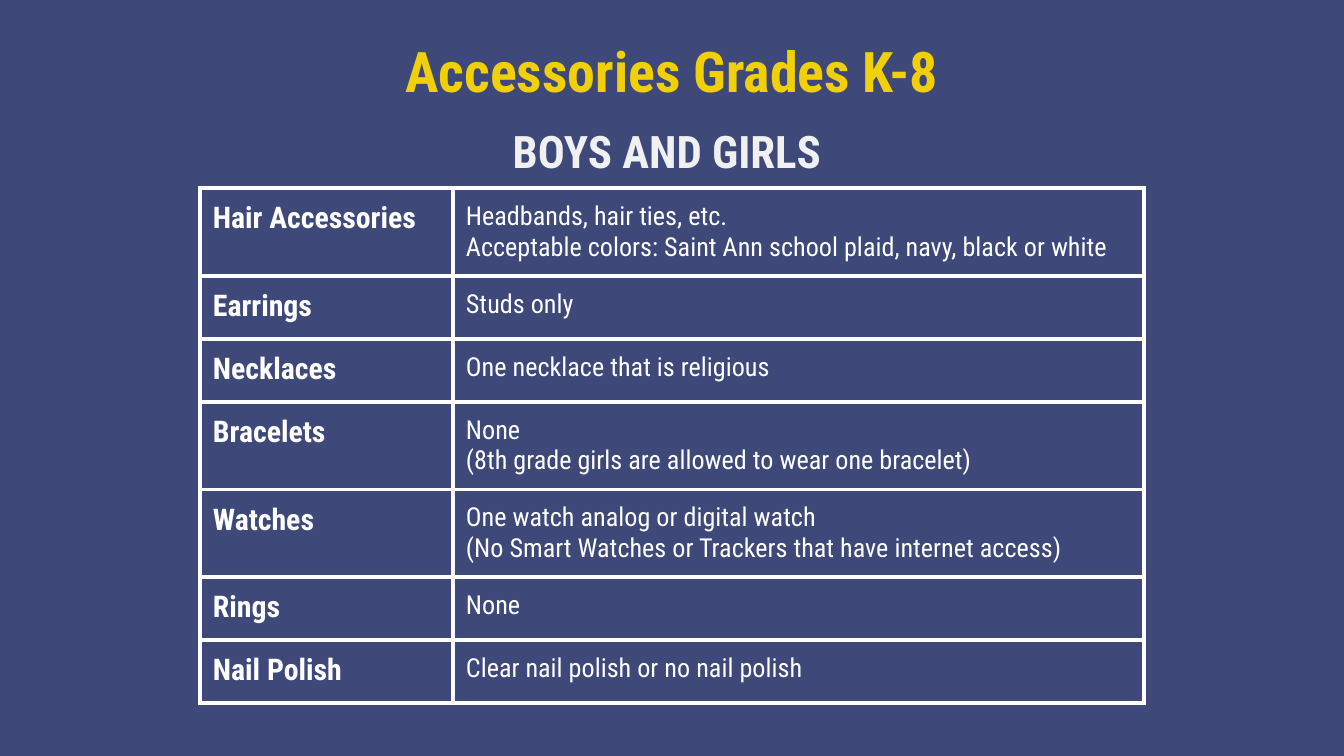
from dataclasses import dataclass

from lxml import etree
from pptx import Presentation
from pptx import util as u
from pptx.dml import color
from pptx.enum import text
from pptx.oxml import ns

SCALE = 914400 / 134.4


@dataclass(frozen=True)
class Theme:
    font: str = "Roboto Condensed"
    back: str = "3E497A"
    gold: str = "F1D00A"
    pale: str = "F0F0F0"
    white: str = "FFFFFF"
    title: int = 30
    head: int = 24
    label: int = 16
    body: int = 14
    rule: float = 2.25
    pad: int = 13


@dataclass(frozen=True)
class Rule:
    item: str
    detail: str


THEME = Theme()
RULES = [
    Rule("Hair Accessories", "Headbands, hair ties, etc.\n"
         "Acceptable colors: Saint Ann school plaid, navy, black or white"),
    Rule("Earrings", "Studs only"),
    Rule("Necklaces", "One necklace that is religious"),
    Rule("Bracelets", "None\n(8th grade girls are allowed to wear one bracelet)"),
    Rule("Watches", "One watch analog or digital watch\n"
         "(No Smart Watches or Trackers that have internet access)"),
    Rule("Rings", "None"),
    Rule("Nail Polish", "Clear nail polish or no nail polish"),
]
COLS = (253, 691)
ROW = 63


def px(n: int) -> u.Emu:
    return u.Emu(round(n * SCALE))


def style(frame, size: int, tint: str, bold: bool) -> None:
    for para in frame.paragraphs:
        for run in para.runs:
            run.font.name = THEME.font
            run.font.size = u.Pt(size)
            run.font.bold = bold
            run.font.color.rgb = color.RGBColor.from_string(tint)


def pad(box) -> None:
    box.margin_left = box.margin_right = px(THEME.pad)
    box.margin_top = box.margin_bottom = px(THEME.pad)
    box.vertical_anchor = text.MSO_ANCHOR.TOP


def heading(shape, words: str, top: int, high: int, size: int,
            tint: str, space: float) -> None:
    shape.left, shape.top = px(0), px(top)
    shape.width, shape.height = px(1344), px(high)
    frame = shape.text_frame
    frame.text = words
    frame.word_wrap = True
    frame.auto_size = text.MSO_AUTO_SIZE.NONE
    pad(frame)
    para = frame.paragraphs[0]
    para.alignment = text.PP_ALIGN.CENTER
    para.line_spacing = space
    style(frame, size, tint, True)


def border(cell) -> None:
    props = cell._tc.get_or_add_tcPr()
    for spot, side in enumerate(("lnL", "lnR", "lnT", "lnB")):
        line = etree.Element(ns.qn(f"a:{side}"), w=str(u.Pt(THEME.rule)))
        fill = etree.SubElement(line, ns.qn("a:solidFill"))
        etree.SubElement(fill, ns.qn("a:srgbClr"), val=THEME.white)
        props.insert(spot, line)


def fill_cell(cell, words: str, size: int, bold: bool) -> None:
    cell.text_frame.text = words
    pad(cell)
    cell.fill.background()
    border(cell)
    style(cell.text_frame, size, THEME.white, bold)


def rule_table(slide, left: int, top: int) -> None:
    grid = slide.shapes.add_table(
        len(RULES), len(COLS), px(left), px(top),
        px(sum(COLS)), px(ROW * len(RULES))).table
    grid.first_row = grid.horz_banding = False
    for col, wide in zip(grid.columns, COLS):
        col.width = px(wide)
    for row, rule in zip(grid.rows, RULES):
        row.height = px(ROW)
        fill_cell(row.cells[0], rule.item, THEME.label, True)
        fill_cell(row.cells[1], rule.detail, THEME.body, False)


def main() -> None:
    deck = Presentation()
    deck.slide_width, deck.slide_height = px(1344), px(756)
    slide = deck.slides.add_slide(deck.slide_layouts[5])
    back = slide.background.fill
    back.solid()
    back.fore_color.rgb = color.RGBColor.from_string(THEME.back)
    heading(slide.shapes.title, "Accessories Grades K-8", 23, 85,
            THEME.title, THEME.gold, 1.0)
    group = slide.shapes.add_textbox(px(0), px(103), px(1344), px(75))
    heading(group, "BOYS AND GIRLS ", 103, 75, THEME.head, THEME.pale, 1.15)
    rule_table(slide, 200, 188)
    deck.save("out.pptx")


if __name__ == "__main__":
    main()
